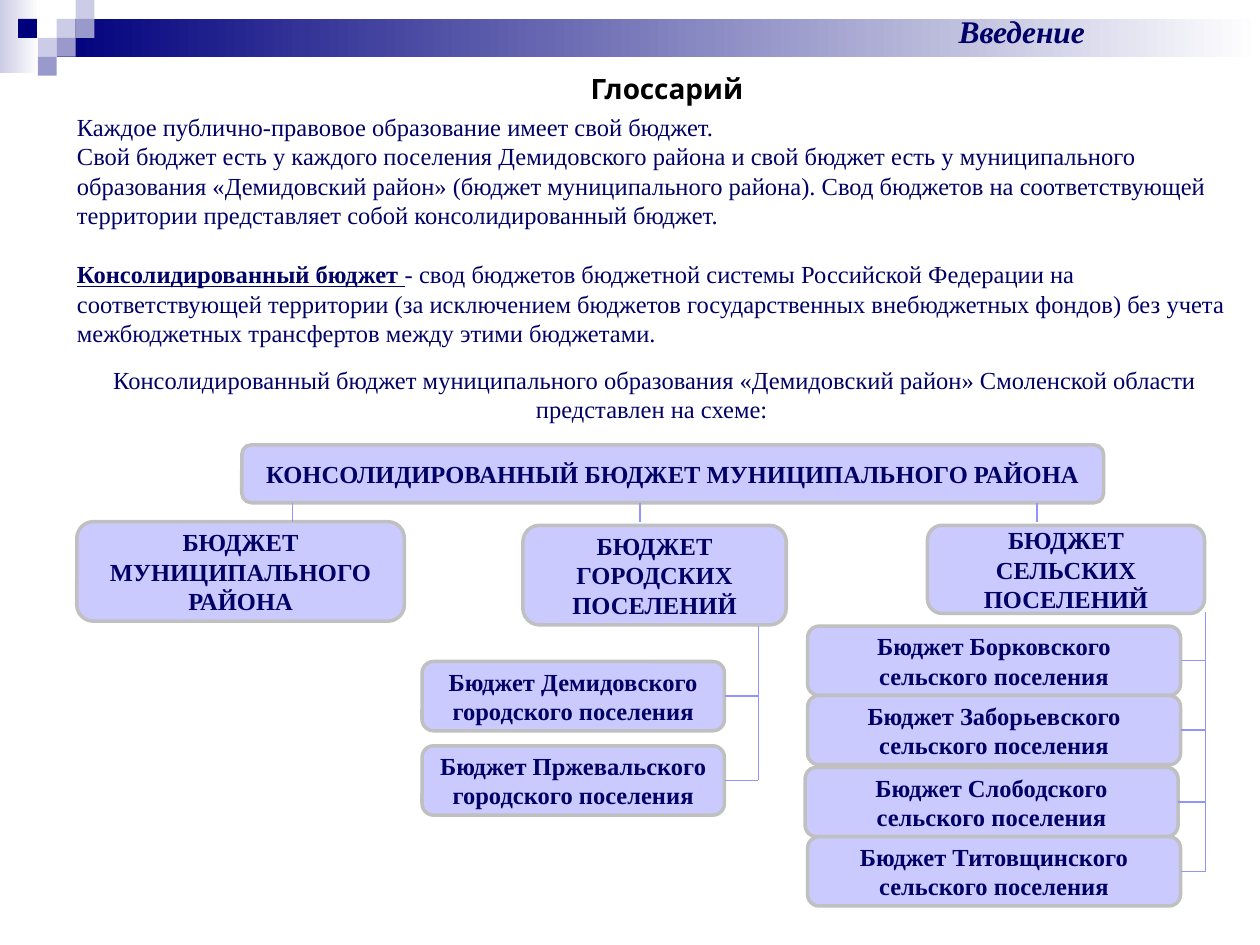
from pptx import Presentation
from pptx.dml.color import RGBColor
from pptx.enum.shapes import MSO_CONNECTOR, MSO_SHAPE
from pptx.enum.text import MSO_ANCHOR, PP_ALIGN
from pptx.oxml.ns import qn
from pptx.util import Pt
from lxml import etree

RECTANGLE = MSO_SHAPE.RECTANGLE
ROUNDED = MSO_SHAPE.ROUNDED_RECTANGLE
STRAIGHT = MSO_CONNECTOR.STRAIGHT
CENTER = PP_ALIGN.CENTER
LEFT = PP_ALIGN.LEFT
MIDDLE = MSO_ANCHOR.MIDDLE
RIGHT_SIDE = 3

WHITE = RGBColor(0xFF, 0xFF, 0xFF)
BLACK = RGBColor(0x00, 0x00, 0x00)
NAVY = RGBColor(0x00, 0x00, 0x7D)
INK = RGBColor(0x00, 0x00, 0x66)
PALE = RGBColor(0xCC, 0xCC, 0xE6)
LILAC = RGBColor(0x99, 0x99, 0xCC)
BOX_FILL = RGBColor(0xCA, 0xCA, 0xFF)
BOX_EDGE = RGBColor(0xC0, 0xC0, 0xC0)
LINK = RGBColor(0x93, 0x93, 0xFC)
SERIF = "Times New Roman"

deck = Presentation()
deck.slide_width, deck.slide_height = Pt(720), Pt(540)
page = deck.slides.add_slide(deck.slide_layouts[6])


def add_box(text, left, top, width, height):
    box = page.shapes.add_shape(ROUNDED, Pt(left), Pt(top), Pt(width), Pt(height))
    box.shadow.inherit = False
    box.fill.solid()
    box.fill.fore_color.rgb = BOX_FILL
    box.line.color.rgb = BOX_EDGE
    box.line.width = Pt(2)
    frame = box.text_frame
    frame.word_wrap = True
    frame.vertical_anchor = MIDDLE
    para = frame.paragraphs[0]
    para.text = text
    para.alignment = CENTER
    para.font.name, para.font.size, para.font.bold = SERIF, Pt(14), True
    para.font.color.rgb = INK
    return box


def add_link(x1, y1, x2, y2):
    link = page.shapes.add_connector(STRAIGHT, Pt(x1), Pt(y1), Pt(x2), Pt(y2))
    link.line.color.rgb = LINK
    link.line.width = Pt(0.75)
    etree.SubElement(link._element.spPr, qn("a:effectLst"))
    return link


# Header bands fading to the right
for left, top, width, height, start, end in [
    (0, 0, 22.3, 41.8, PALE, WHITE),
    (32.4, 10.8, 687.6, 21.6, NAVY, WHITE),
]:
    band = page.shapes.add_shape(RECTANGLE, Pt(left), Pt(top), Pt(width), Pt(height))
    band.shadow.inherit = False
    band.line.fill.background()
    band.fill.gradient()
    band.fill.gradient_angle = 0
    for stop, color, position in zip(band.fill.gradient_stops, (start, end), (0, 1)):
        stop.color.rgb = color
        stop.position = position

# Header mosaic
TILE = 10.8
for left, top, color in [
    (32.4, 10.8, PALE), (43.2, 0, PALE), (43.2, 10.8, LILAC), (21.6, 21.6, PALE),
    (10.3, 10.8, NAVY), (32.4, 21.6, LILAC), (21.6, 32.4, LILAC),
]:
    tile = page.shapes.add_shape(RECTANGLE, Pt(left), Pt(top), Pt(TILE), Pt(TILE))
    tile.shadow.inherit = False
    tile.line.fill.background()
    tile.fill.solid()
    tile.fill.fore_color.rgb = color

# Section name and heading
for text, left, top, width, height, font, size, color, italic in [
    ("Введение", 450.7, 3.6, 266.4, 28.8, SERIF, 18, INK, True),
    ("Глоссарий", 115.2, 37.4, 532, 27.4, "Comic Neue", 16, BLACK, False),
]:
    box = page.shapes.add_textbox(Pt(left), Pt(top), Pt(width), Pt(height))
    box.text_frame.word_wrap = True
    para = box.text_frame.paragraphs[0]
    para.text = text
    para.alignment = CENTER
    para.font.name, para.font.size = font, Pt(size)
    para.font.bold, para.font.italic = True, italic
    para.font.color.rgb = color

# Body text: space before, alignment, underlined term, wording
body = page.shapes.add_textbox(Pt(36.9), Pt(60.5), Pt(674.6), Pt(193.7))
body.text_frame.word_wrap = True
for index, (space, align, term, text) in enumerate([
    (0, LEFT, "", "Каждое публично-правовое образование имеет свой бюджет."),
    (0, LEFT, "", "Свой бюджет есть у каждого поселения Демидовского района и свой бюджет есть "
     "у муниципального образования «Демидовский район» (бюджет муниципального района). "
     "Свод бюджетов на соответствующей территории представляет собой "
     "консолидированный бюджет."),
    (16.8, LEFT, "Консолидированный бюджет ",
     "- свод бюджетов бюджетной системы Российской Федерации на соответствующей "
     "территории (за исключением бюджетов государственных внебюджетных фондов) "
     "без учета межбюджетных трансфертов между этими бюджетами."),
    (10, CENTER, "", "Консолидированный бюджет муниципального образования "
     "«Демидовский район» Смоленской области представлен на схеме: "),
]):
    para = body.text_frame.paragraphs[0] if index == 0 else body.text_frame.add_paragraph()
    para.alignment = align
    para.space_before = Pt(space)
    para.font.name, para.font.size = SERIF, Pt(14)
    para.font.color.rgb = INK
    if term:
        span = para.add_run()
        span.text = term
        span.font.bold = span.font.underline = True
    para.add_run().text = text

# Top of the scheme and its three branches
add_box("КОНСОЛИДИРОВАННЫЙ БЮДЖЕТ МУНИЦИПАЛЬНОГО РАЙОНА", 138.2, 254.2, 492.5, 33.1)
for text, left, top, width, height, link_x in [
    ("БЮДЖЕТ МУНИЦИПАЛЬНОГО РАЙОНА", 43.9, 298.1, 187.2, 56.9, 167),
    ("БЮДЖЕТ ГОРОДСКИХ ПОСЕЛЕНИЙ", 298.8, 300.2, 150.5, 56.9, 365.8),
    ("БЮДЖЕТ СЕЛЬСКИХ ПОСЕЛЕНИЙ", 530, 300.2, 158.4, 50.4, 592.6),
]:
    add_box(text, left, top, width, height)
    add_link(link_x, 287.3, link_x, 298.1)

# Settlements, each joined to the trunk on its right
LEAF_HEIGHT = 39.6
for kind, width, trunk_x, trunk_top, leaves in [
    ("городского", 172.8, 433.4, 357.8,
     [("Демидовского", 241.2, 378), ("Пржевальского", 241.2, 426.2)]),
    ("сельского", 213.1, 689, 350,
     [("Борковского", 461.5, 357.8), ("Заборьевского", 461.5, 397.4),
      ("Слободского", 460.1, 438.5), ("Титовщинского", 461.5, 478.1)]),
]:
    for name, left, top in leaves:
        leaf = add_box(f"Бюджет {name} {kind} поселения", left, top, width, LEAF_HEIGHT)
        middle = top + LEAF_HEIGHT / 2
        branch = add_link(left + width, middle, trunk_x, middle)
        branch.begin_connect(leaf, RIGHT_SIDE)
    add_link(trunk_x, trunk_top, trunk_x, middle)

deck.save("out.pptx")
